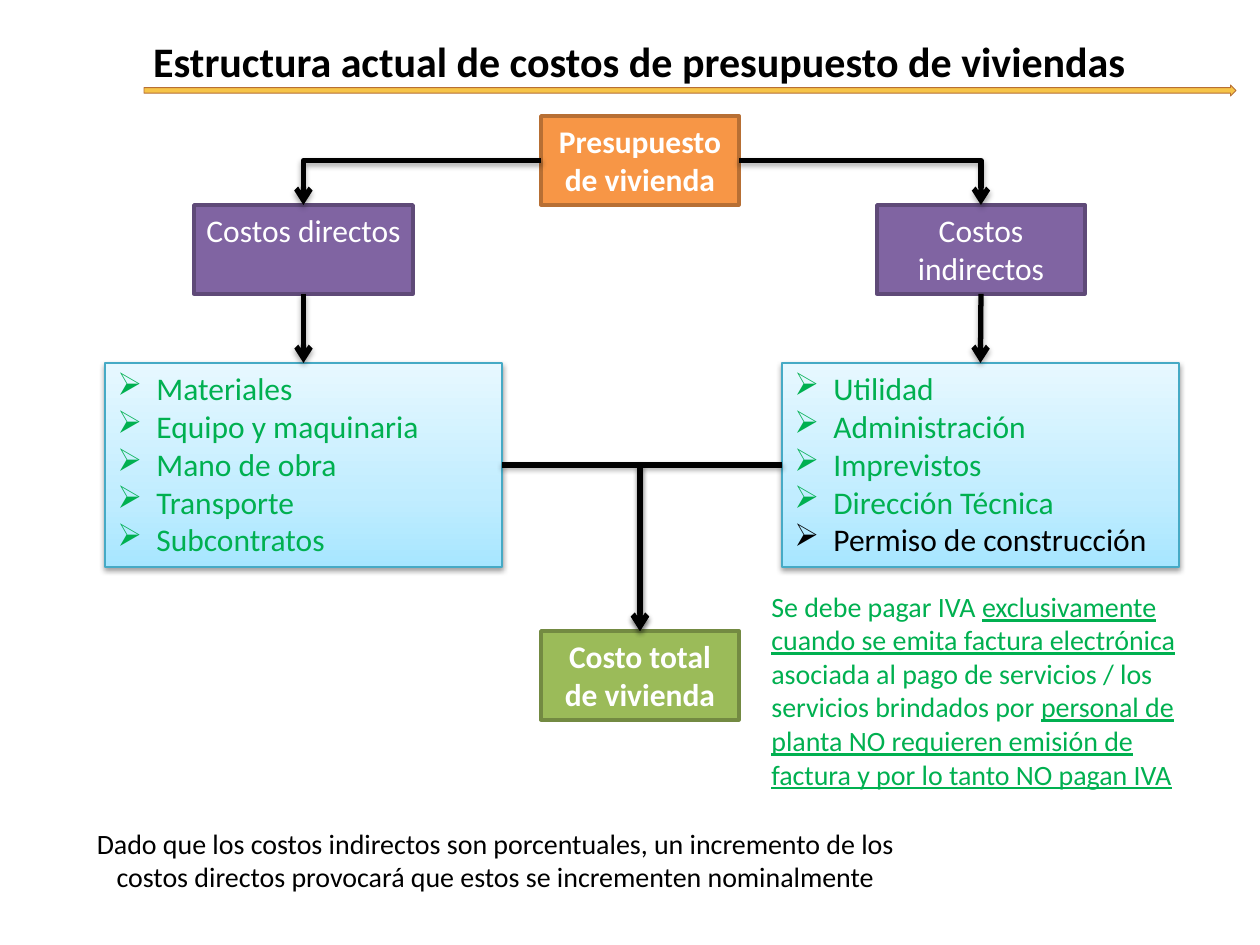
"""Build a slide on the cost structure of a housing budget."""
from copy import deepcopy
from dataclasses import dataclass

from lxml.etree import SubElement
from pptx import Presentation
from pptx.dml.color import RGBColor as RGB
from pptx.enum.shapes import MSO_CONNECTOR as Link, MSO_SHAPE as Shape
from pptx.enum.text import MSO_ANCHOR as Anchor, PP_ALIGN as Align
from pptx.oxml.ns import qn
from pptx.util import Emu, Pt

SCALE = 914400 / 126


@dataclass(frozen=True)
class Theme:
    font: str = "Calibri"
    title_size: int = 24
    box_size: int = 18
    note_size: int = 16
    black: str = "000000"
    white: str = "FFFFFF"
    green: str = "00B050"
    gold: str = "F6C448"
    brown: str = "B76F34"
    orange: str = "F79646"
    purple: str = "8064A2"
    purple_edge: str = "5F4A78"
    olive: str = "9BBB59"
    olive_edge: str = "738A42"
    sky_edge: str = "46AAC5"
    sky: tuple = ((0, "A7E6FF"), (0.35, "C1EDFF"), (1, "E7F8FF"))


def px(*lengths):
    return [Emu(round(length * SCALE)) for length in lengths]


def add_shadow(effects, opacity, distance):
    shadow = SubElement(effects, qn("a:outerShdw"), blurRad="40000", dist=str(distance),
                        dir="5400000", rotWithShape="0")
    color = SubElement(shadow, qn("a:srgbClr"), val=theme.black)
    SubElement(color, qn("a:alpha"), val=str(opacity * 1000))


theme = Theme()
deck = Presentation()
deck.slide_width, deck.slide_height = px(1260, 945)
page = deck.slides.add_slide(deck.slide_layouts[5])

title = page.shapes.title
title.left, title.top, title.width, title.height = px(74, 29, 1131, 63)
title.text_frame.text = "Estructura actual de costos de presupuesto de viviendas"
title.text_frame.vertical_anchor = Anchor.TOP
para = title.text_frame.paragraphs[0]
para.alignment = Align.CENTER
para.font.name, para.font.size, para.font.bold = theme.font, Pt(theme.title_size), True
para.font.color.rgb = RGB.from_string(theme.black)

boxes = {}
for name, kind, place, fill, edge, weight, text, bold in [
    ("rule", Shape.RIGHT_ARROW, (144, 85, 1092, 11), theme.gold, theme.brown, 0.5, "", False),
    ("budget", Shape.RECTANGLE, (541, 116, 198, 89), theme.orange, theme.brown, 2,
     "Presupuesto de vivienda", True),
    ("direct", Shape.RECTANGLE, (194, 205, 219, 89), theme.purple, theme.purple_edge, 2,
     "Costos directos", False),
    ("indirect", Shape.RECTANGLE, (877, 205, 208, 89), theme.purple, theme.purple_edge, 2,
     "Costos indirectos", False),
    ("total", Shape.RECTANGLE, (541, 631, 198, 89), theme.olive, theme.olive_edge, 2,
     "Costo total de vivienda", True),
]:
    box = boxes[name] = page.shapes.add_shape(kind, *px(*place))
    box.shadow.inherit = False
    box.fill.solid()
    box.fill.fore_color.rgb = RGB.from_string(fill)
    box.line.color.rgb = RGB.from_string(edge)
    box.line.width = Pt(weight)
    if text:
        box.text_frame.text = text
        box.text_frame.vertical_anchor = Anchor.TOP
        para = box.text_frame.paragraphs[0]
        para.alignment = Align.CENTER
        para.font.name, para.font.size, para.font.bold = theme.font, Pt(theme.box_size), bold
        para.font.color.rgb = RGB.from_string(theme.white)

for name, left, items in [
    ("direct list", 105, ["Materiales", "Equipo y maquinaria", "Mano de obra",
                          "Transporte", "Subcontratos"]),
    ("indirect list", 782, ["Utilidad", "Administración", "Imprevistos",
                            "Dirección Técnica", "Permiso de construcción"]),
]:
    box = boxes[name] = page.shapes.add_shape(Shape.RECTANGLE, *px(left, 363, 397, 204))
    box.shadow.inherit = False
    add_shadow(box._element.spPr.find(qn("a:effectLst")), 38, 20000)
    box.fill.gradient()
    box.fill.gradient_angle = 90
    stops = box._element.spPr.find(qn("a:gradFill")).find(qn("a:gsLst"))
    stops.insert(1, deepcopy(stops[0]))
    for stop, (position, color) in zip(box.fill.gradient_stops, theme.sky):
        stop.position = position
        stop.color.rgb = RGB.from_string(color)
    box.line.color.rgb = RGB.from_string(theme.sky_edge)
    box.line.width = Pt(0.75)
    box.text_frame.text = "\n".join(items)
    box.text_frame.vertical_anchor = Anchor.TOP
    for para, item in zip(box.text_frame.paragraphs, items):
        para.alignment = Align.JUSTIFY
        indent = px(39)[0]
        props = para._p.get_or_add_pPr()
        props.set("marL", str(indent))
        props.set("indent", str(-indent))
        SubElement(props, qn("a:buChar"), char="➢")
        para.font.name, para.font.size = theme.font, Pt(theme.box_size)
        color = theme.black if item == "Permiso de construcción" else theme.green
        para.font.color.rgb = RGB.from_string(color)
        para.runs[0].font.color.rgb = RGB.from_string(color)

TOP, LEFT, BOTTOM, RIGHT = range(4)
for start, start_side, end, bent in [
    ("budget", LEFT, "direct", True),
    ("budget", RIGHT, "indirect", True),
    ("direct", BOTTOM, "direct list", False),
    ("indirect", BOTTOM, "indirect list", False),
    ("direct list", RIGHT, "total", True),
    ("indirect list", LEFT, "total", True),
]:
    arrow = page.shapes.add_connector(Link.ELBOW if bent else Link.STRAIGHT, 0, 0, 0, 0)
    arrow.begin_connect(boxes[start], start_side)
    arrow.end_connect(boxes[end], TOP)
    arrow.line.color.rgb = RGB.from_string(theme.black)
    arrow.line.width = Pt(3)
    props = arrow._element.spPr
    if bent:
        props.find(qn("a:prstGeom")).set("prst", "bentConnector2")
    SubElement(props.find(qn("a:ln")), qn("a:tailEnd"), type="arrow")
    add_shadow(SubElement(props, qn("a:effectLst")), 35, 23000)

for place, align, color, spans in [
    ((759, 583, 446, 217), Align.LEFT, theme.green, [
        ("Se debe pagar IVA ", False),
        ("exclusivamente cuando se emita factura electrónica", True),
        (" asociada al pago de servicios / los servicios brindados por ", False),
        ("personal de planta NO requieren emisión de factura y por lo tanto NO pagan IVA", True),
    ]),
    ((74, 820, 843, 81), Align.CENTER, theme.black, [
        ("Dado que los costos indirectos son porcentuales, un incremento de los costos "
         "directos provocará que estos se incrementen nominalmente", False),
    ]),
]:
    box = page.shapes.add_textbox(*px(*place))
    box.text_frame.word_wrap = True
    para = box.text_frame.paragraphs[0]
    para.alignment = align
    para.font.name, para.font.size = theme.font, Pt(theme.note_size)
    para.font.color.rgb = RGB.from_string(color)
    for text, underlined in spans:
        span = para.add_run()
        span.text = text
        span.font.underline = underlined

deck.save("out.pptx")
